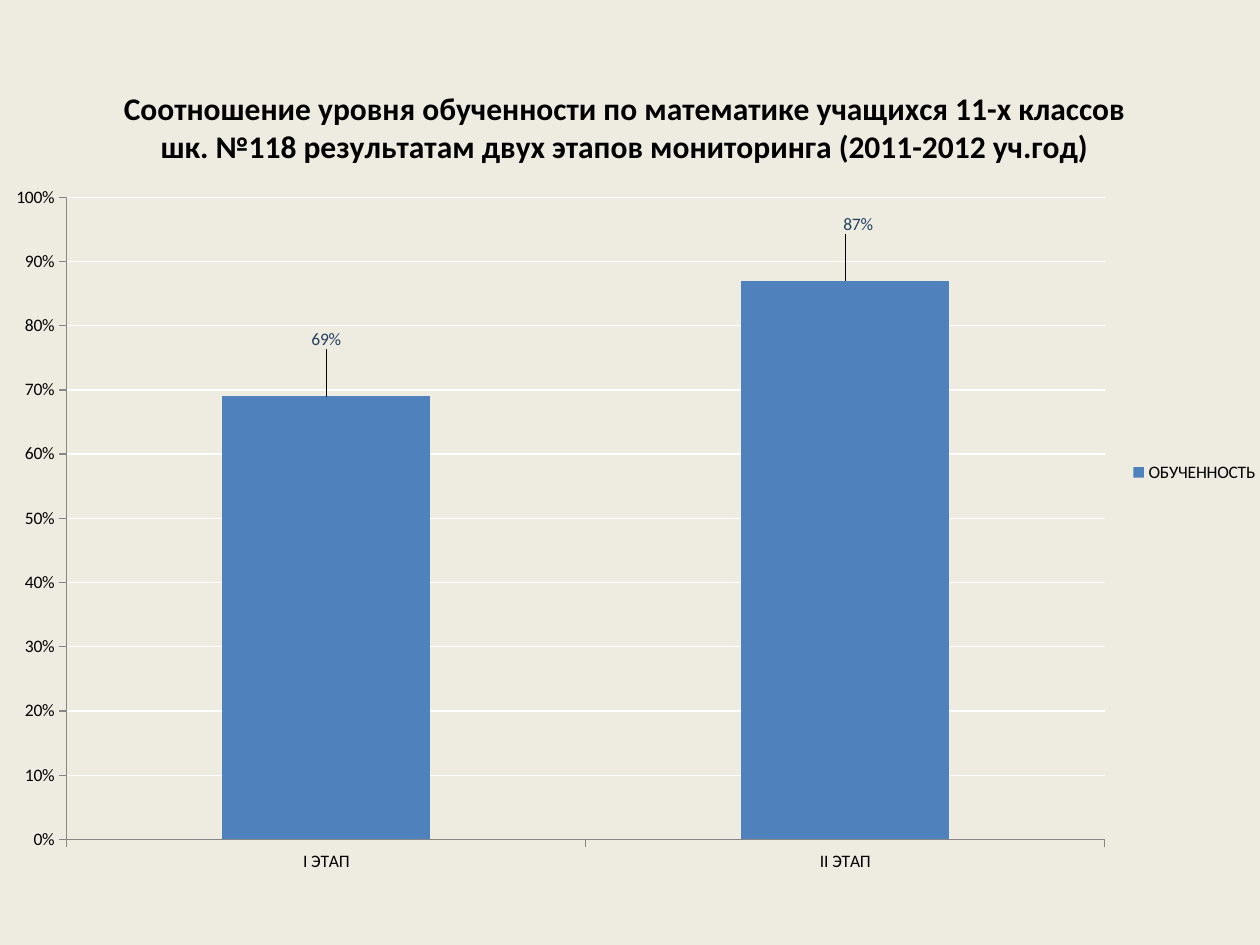
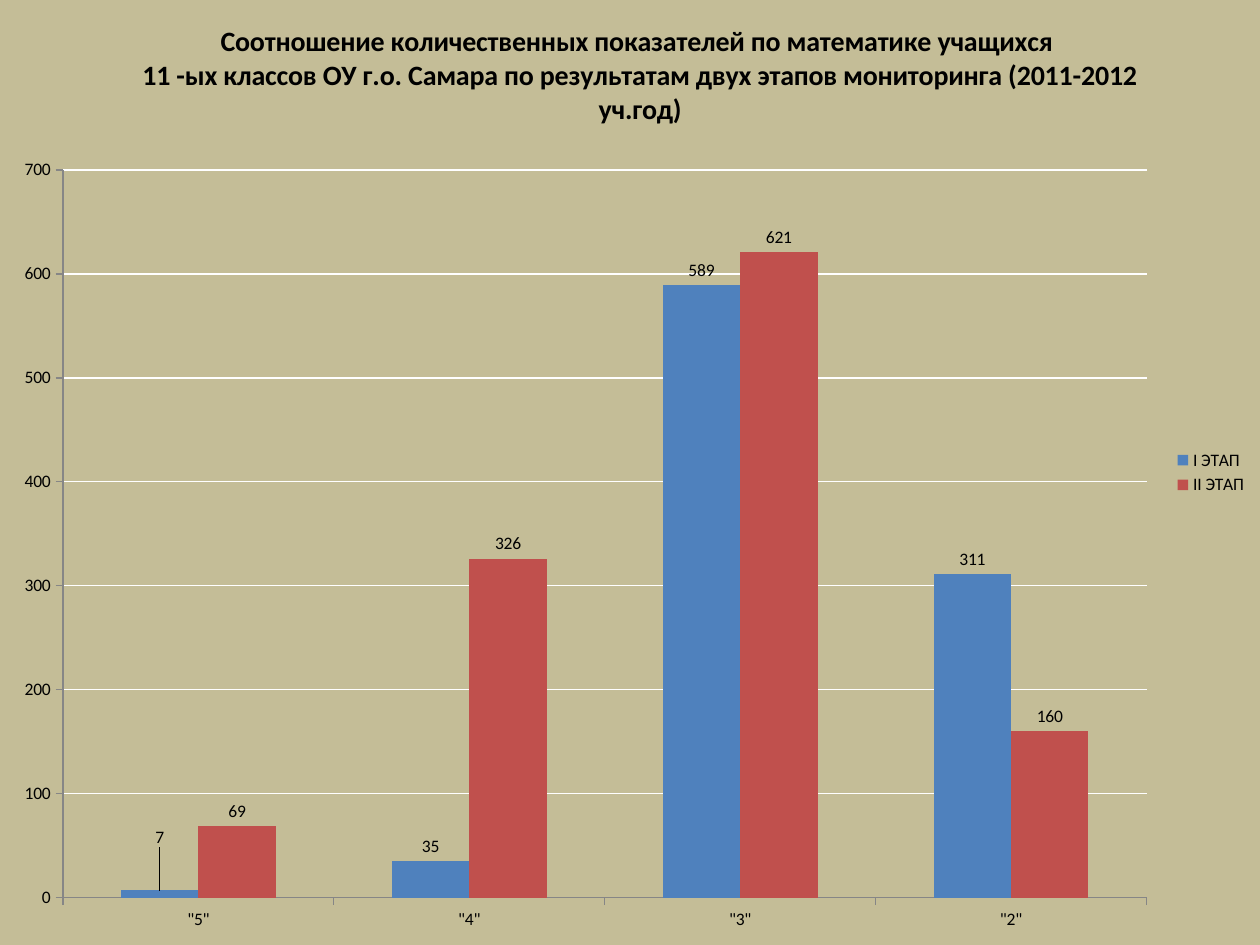
from pptx import Presentation
from pptx.chart.data import CategoryChartData as ChartData
from pptx.dml.color import RGBColor
from pptx.enum.chart import XL_CHART_TYPE as ChartType
from pptx.enum.chart import XL_LABEL_POSITION as LabelPosition
from pptx.enum.chart import XL_LEGEND_POSITION as LegendPosition
from pptx.enum.chart import XL_TICK_MARK as TickMark
from pptx.oxml import parse_xml
from pptx.oxml.ns import nsdecls, qn
from pptx.util import Inches, Pt

# Shared style
FONT = "Calibri"
BLACK, WHITE, GREY = "000000", "FFFFFF", "868686"
CREAM, KHAKI = "EEECE1", "C4BD97"
BLUE, RED, NAVY = "4F81BD", "C0504D", "254061"
STAGES = ["I ЭТАП", "II ЭТАП"]


def colour(value):
    return RGBColor.from_string(value)


def style_font(font, size, value, bold=False):
    font.name = FONT
    font.size = Pt(size)
    font.bold = bold
    font.color.rgb = colour(value)


def area_format(fill=None):
    paint = (f'<a:solidFill><a:srgbClr val="{fill}"/></a:solidFill>'
             if fill else "<a:noFill/>")
    return parse_xml(f'<c:spPr {nsdecls("c", "a")}>{paint}'
                     '<a:ln><a:noFill/></a:ln></c:spPr>')


def place(element, index, inner=False, **settings):
    """Give a chart part a manual layout (fractions of the chart)."""
    for old in element.findall(qn("c:layout")):
        element.remove(old)
    parts = '<c:layoutTarget val="inner"/>' if inner else ""
    if "w" in settings or not inner and settings.pop("edge", False):
        parts += '<c:xMode val="edge"/><c:yMode val="edge"/>'
    parts += "".join(f'<c:{name} val="{value}"/>'
                     for name, value in settings.items())
    element.insert(index, parse_xml(
        f'<c:layout {nsdecls("c")}><c:manualLayout>{parts}'
        '</c:manualLayout></c:layout>'))


class ChartDeck:
    def __init__(self):
        self.deck = Presentation()
        self.deck.slide_width = Inches(10)
        self.deck.slide_height = Inches(7.5)
        self.page = None

    def add_page(self):
        self.page = self.deck.slides.add_slide(self.deck.slide_layouts[6])
        background = self.page.background.fill
        background.solid()
        background.fore_color.rgb = colour(CREAM)

    def add_columns(self, box, categories, series, number_format, plot_box,
                    fill=None):
        data = ChartData(number_format=number_format)
        data.categories = categories
        for name, values in series.items():
            data.add_series(name, values)
        chart = self.page.shapes.add_chart(
            ChartType.COLUMN_CLUSTERED, *map(Inches, box), data).chart
        style_font(chart.font, 10, BLACK)
        plot = chart.plots[0]
        plot.gap_width = 150
        plot.overlap = 0
        plot.vary_by_categories = False
        for item, value in zip(plot.series, (BLUE, RED)):
            item.format.fill.solid()
            item.format.fill.fore_color.rgb = colour(value)
            item.invert_if_negative = False
        chart.has_legend = True
        chart.legend.position = LegendPosition.RIGHT
        chart.legend.include_in_layout = False
        # Chart and plot backgrounds
        body = chart._chartSpace.find(qn("c:chart"))
        body.addnext(area_format(fill))
        plot_area = body.find(qn("c:plotArea"))
        plot_area.append(area_format())
        place(plot_area, 0, inner=True, **dict(zip("xywh", plot_box)))
        return chart

    def style_axes(self, chart, top, step, number_format):
        for axis in (chart.category_axis, chart.value_axis):
            axis.major_tick_mark = TickMark.OUTSIDE
            axis.minor_tick_mark = TickMark.NONE
            axis.format.line.color.rgb = colour(GREY)
            axis.format.line.width = Pt(0.75)
        axis = chart.value_axis
        axis.minimum_scale, axis.maximum_scale = 0, top
        axis.major_unit = step
        axis.tick_labels.number_format = number_format
        axis.tick_labels.number_format_is_linked = False
        axis.has_major_gridlines = True
        axis.major_gridlines.format.line.color.rgb = colour(WHITE)
        axis.major_gridlines.format.line.width = Pt(0.75)

    def add_title(self, chart, text, size, left, top):
        chart.has_title = True
        title = chart.chart_title
        title.include_in_layout = False
        title.text_frame.text = text
        for para in title.text_frame.paragraphs:
            style_font(para.font, size, BLACK, bold=True)
        place(title._element, 1, edge=True, x=left, y=top)

    def add_labels(self, chart, number_format, value, shifts):
        """Label all columns; shifts maps a first-series point to its offset."""
        for item in chart.plots[0].series:
            labels = item.data_labels
            labels.show_value = True
            labels.number_format = number_format
            labels.number_format_is_linked = False
            labels.position = LabelPosition.OUTSIDE_END
            style_font(labels.font, 10, value)
        first = chart.plots[0].series[0]
        for index, (right, down) in shifts.items():
            label = first.points[index].data_label
            label.position = LabelPosition.OUTSIDE_END
            style_font(label.font, 10, value)
        shifted = first._element.iter(qn("c:dLbl"))
        for element, (right, down) in zip(list(shifted), shifts.values()):
            place(element, 1, x=right, y=down)


def main():
    show = ChartDeck()

    # Learning level by stage
    show.add_page()
    level = show.add_columns((-0.08, 0.44, 10.17, 6.62), STAGES,
                             {"ОБУЧЕННОСТЬ": [0.69, 0.87]}, "0%",
                             (0.06, 0.17, 0.81, 0.77))
    show.style_axes(level, 1, 0.1, "0%")
    show.add_title(level, "Соотношение уровня обученности по математике "
                   "учащихся 11-х классов шк. №118 результатам двух этапов "
                   "мониторинга (2011-2012 уч.год)", 18, 0.1, 0.03)
    show.add_labels(level, "0%", NAVY, {0: (0, -0.05), 1: (0.01, -0.05)})

    # Number of pupils by mark
    show.add_page()
    marks = show.add_columns((0, 0, 10, 7.5), ['"5"', '"4"', '"3"', '"2"'],
                             dict(zip(STAGES, ([7, 35, 589, 311],
                                               [69, 326, 621, 160]))),
                             "0", (0.05, 0.18, 0.86, 0.77), KHAKI)
    show.style_axes(marks, 700, 100, "0")
    show.add_title(marks, "Соотношение количественных показателей по "
                   "математике учащихся \n11 -ых классов ОУ г.о. Самара по "
                   "результатам двух этапов мониторинга (2011-2012 уч.год)",
                   16, 0.11, 0.02)
    show.add_labels(marks, "0", BLACK, {0: (0, -0.04)})

    show.deck.save("out.pptx")


if __name__ == "__main__":
    main()
